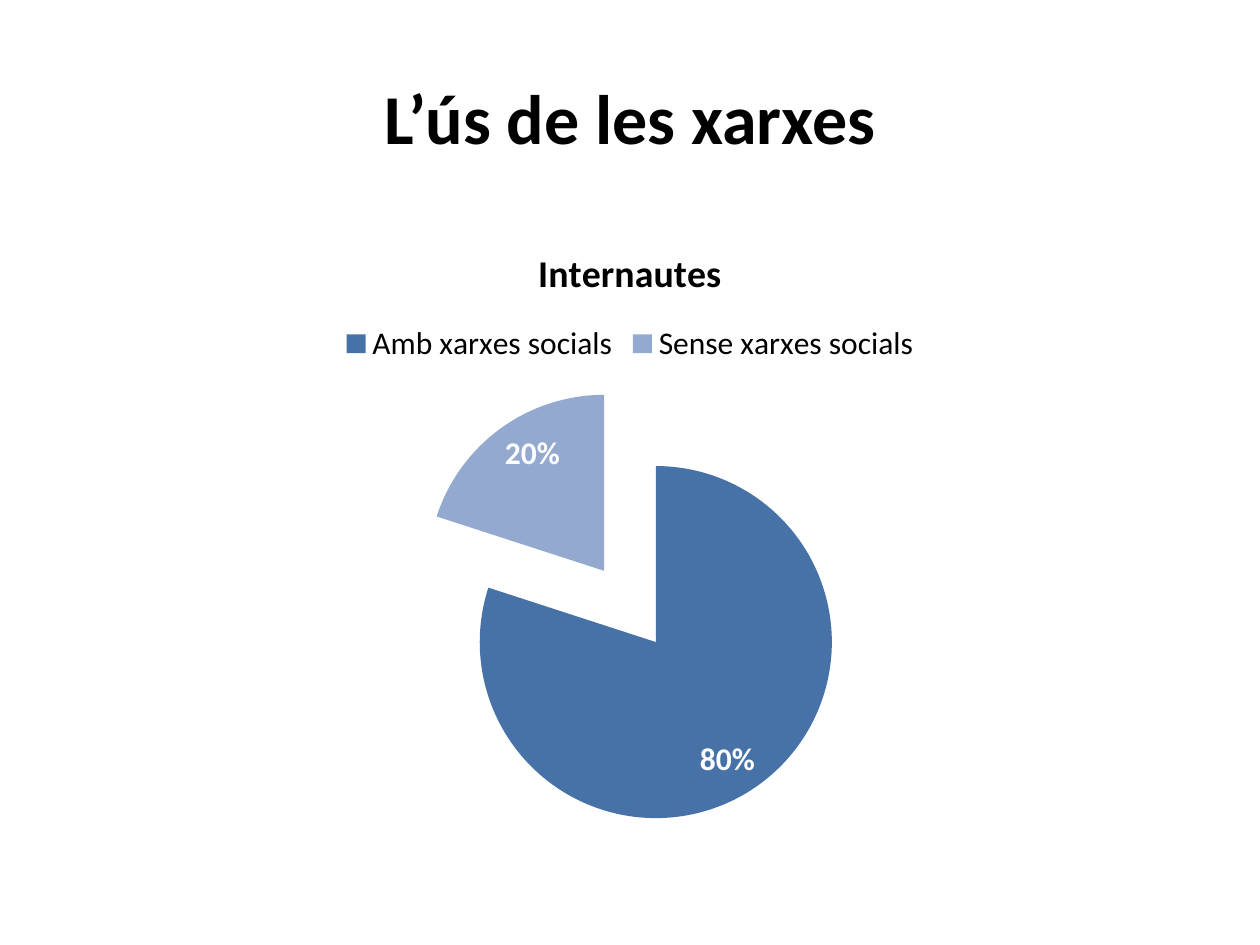
from dataclasses import dataclass

from lxml import etree
from pptx import Presentation
from pptx import util as u
from pptx.chart.data import CategoryChartData
from pptx.dml.color import RGBColor
from pptx.enum import chart as charts, text
from pptx.oxml.ns import qn

# Content
TITLE = "L’ús de les xarxes"
SERIES = "Internautes"
SLICES = [
    ("Amb xarxes socials", 0.8, "4672A8"),
    ("Sense xarxes socials", 0.2, "93A9CF"),
]
EXPLOSION = 25


@dataclass(frozen=True)
class Theme:
    font: str = "Calibri"
    ink: str = "000000"
    light: str = "FFFFFF"
    title: float = 40
    heading: float = 21.6
    body: float = 18


THEME = Theme()

# Layout in px
PX = u.Inches(1) / 126
WIDTH, HEIGHT = 1260, 945
MARGIN = 63
TITLE_TOP, TITLE_HEIGHT = 38, 157
CHART_TOP, CHART_HEIGHT = 220, 624


def px(*lengths):
    return [u.Emu(round(length * PX)) for length in lengths]


def style(font, size=THEME.body, color=THEME.ink, bold=False):
    font.name, font.size, font.bold = THEME.font, u.Pt(size), bold
    font.color.rgb = RGBColor.from_string(color)


def write(frame, words, align=text.PP_ALIGN.CENTER, **font_format):
    para = frame.paragraphs[0]
    para.alignment = align
    span = para.add_run()
    span.text = words
    style(span.font, **font_format)


deck = Presentation()
deck.slide_width, deck.slide_height = px(WIDTH, HEIGHT)
page = deck.slides.add_slide(deck.slide_layouts[6])
content_width = WIDTH - 2 * MARGIN

# Title
box = page.shapes.add_textbox(*px(MARGIN, TITLE_TOP, content_width, TITLE_HEIGHT))
box.text_frame.word_wrap = True
box.text_frame.vertical_anchor = text.MSO_ANCHOR.MIDDLE
write(box.text_frame, TITLE, size=THEME.title, bold=True)

# Pie chart
names, shares, colors = zip(*SLICES)
data = CategoryChartData(number_format="0%")
data.categories = names
data.add_series(SERIES, shares)
chart = page.shapes.add_chart(
    charts.XL_CHART_TYPE.PIE,
    *px(MARGIN, CHART_TOP, content_width, CHART_HEIGHT), data
).chart
style(chart.font)
chart.has_title = True
write(chart.chart_title.text_frame, SERIES, size=THEME.heading, bold=True)
chart.chart_title.include_in_layout = False
chart.has_legend = True
chart.legend.position = charts.XL_LEGEND_POSITION.TOP
chart.legend.include_in_layout = False
style(chart.legend.font)

# Exploded slices
plot = chart.plots[0]
plot.vary_by_categories = True
pie = plot.series[0]
explosion = etree.Element(qn("c:explosion"), val=str(EXPLOSION))
pie._element.find(qn("c:tx")).addnext(explosion)
for index, color in enumerate(colors):
    fill = pie.points[index].format.fill
    fill.solid()
    fill.fore_color.rgb = RGBColor.from_string(color)

# Slice labels
labels = pie.data_labels
labels.show_value = True
labels.show_percentage = False
labels.number_format = "0%"
labels.number_format_is_linked = False
labels.position = charts.XL_LABEL_POSITION.INSIDE_END
style(labels.font, color=THEME.light, bold=True)

deck.save("out.pptx")
